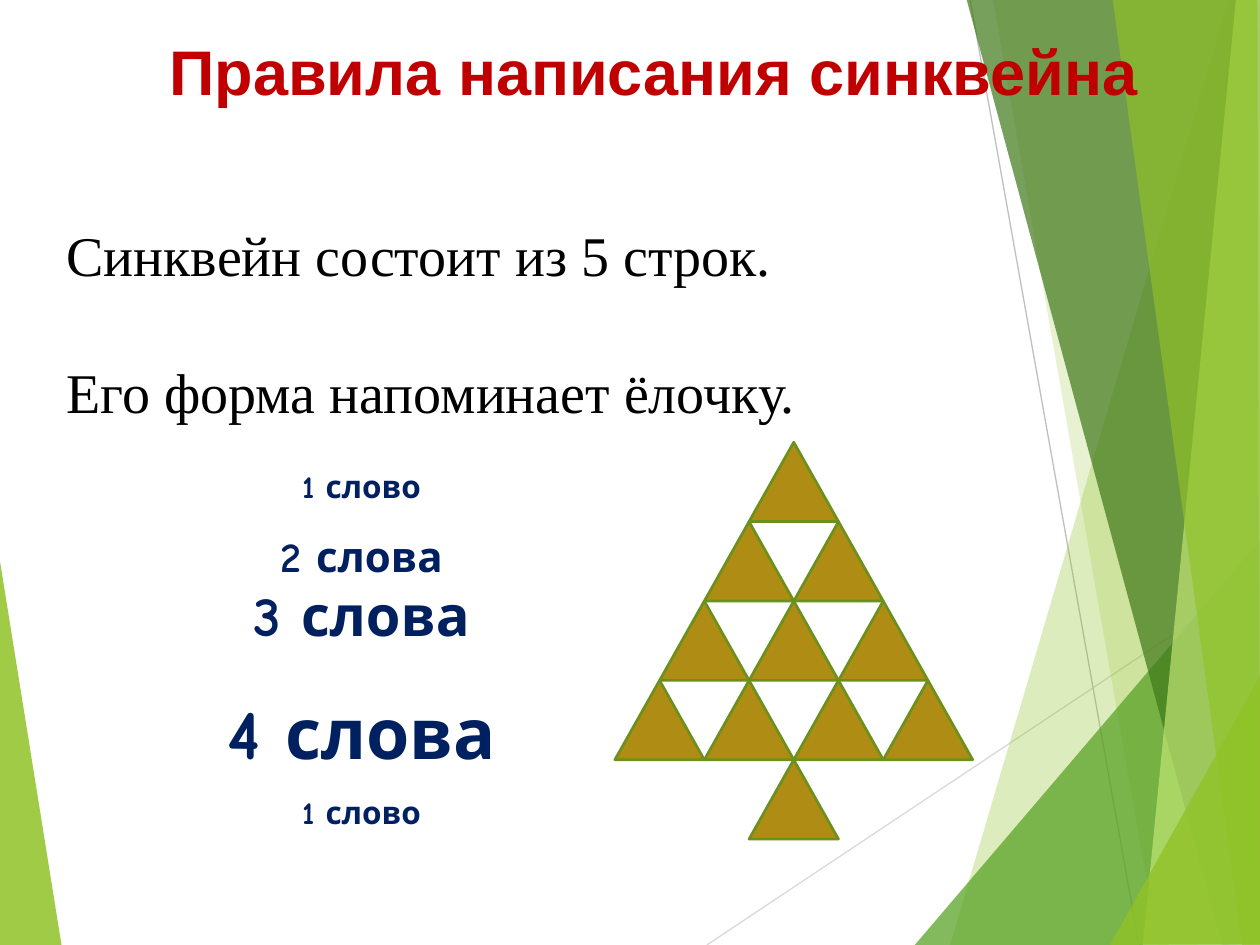
from dataclasses import dataclass

from lxml.etree import SubElement
from pptx import Presentation
from pptx.dml.color import RGBColor
from pptx.enum.shapes import MSO_CONNECTOR, MSO_SHAPE
from pptx.enum.text import PP_ALIGN
from pptx.oxml.ns import qn
from pptx.shapes.base import BaseShape
from pptx.util import Inches, Pt


@dataclass(frozen=True)
class Theme:
    lime: str = "90C226"
    green: str = "54A021"
    dark: str = "3F7819"
    pale: str = "C0E474"
    tree: str = "AF8C14"
    edge: str = "6B901C"
    red: str = "C00000"
    navy: str = "002060"
    black: str = "000000"
    head: int = 36
    body: int = 32
    steps: tuple = (18, 24, 32, 40, 18)


@dataclass(frozen=True)
class Panel:
    points: tuple
    color: str
    alpha: int


@dataclass(frozen=True)
class Ray:
    start: tuple
    end: tuple
    color: str


@dataclass(frozen=True)
class Line:
    text: str
    font: dict
    format: dict


THEME = Theme()

# Backdrop parts, from back to front
BACKDROP = (
    Panel(((-0.01, 4.39), (0.49, 7.51), (-0.01, 7.5)), THEME.lime, 85),
    Ray((5.61, 7.5), (10.01, 4.57), "D9D9D9"),
    Ray((7.7, 0), (9.04, 7.5), "BFBFBF"),
    Panel(((9.75, 0), (7.54, 7.5), (10.02, 7.51), (10.01, 0.01)), THEME.lime, 30),
    Panel(((7.88, -0.01), (9.19, 7.5), (10.01, 7.5), (10.01, -0.01)), THEME.lime, 20),
    Panel(((7.26, 7.5), (10, 4.29), (10.01, 7.5)), THEME.green, 72),
    Panel(((7.67, -0.01), (9.7, 7.5), (10.01, 7.49), (10.01, -0.01)), THEME.dark, 70),
    Panel(((9.81, -0.01), (9.07, 7.5), (10.01, 7.5), (10, -0.01)), THEME.pale, 70),
    Panel(((8.83, -0.01), (9.86, 7.5), (10, 7.5), (9.98, -0.01)), THEME.lime, 65),
    Panel(((8.81, 7.5), (10.01, 5.35), (10.01, 7.49)), THEME.lime, 80),
)


def rgb(code: str) -> RGBColor:
    return RGBColor.from_string(code)


def assign(target: object, values: dict) -> None:
    for name, value in values.items():
        setattr(target, name, value)


def paint(shape: BaseShape, color: str) -> None:
    shape.shadow.inherit = False
    shape.fill.solid()
    shape.fill.fore_color.rgb = rgb(color)


def draw_panel(shapes, panel: Panel) -> None:
    points = [(Inches(x), Inches(y)) for x, y in panel.points]
    outline = shapes.build_freeform(*points[0])
    outline.add_line_segments(points[1:], close=True)
    shape = outline.convert_to_shape()
    paint(shape, panel.color)
    shape.line.fill.background()
    color = shape.fill._xPr.find(qn("a:solidFill"))[0]
    SubElement(color, qn("a:alpha"), val=str(panel.alpha * 1000))


def draw_ray(shapes, ray: Ray) -> None:
    ends = [Inches(value) for value in ray.start + ray.end]
    line = shapes.add_connector(MSO_CONNECTOR.STRAIGHT, *ends)
    line.line.color.rgb = rgb(ray.color)
    line.line.width = Pt(0.75)
    SubElement(line._element.spPr, qn("a:effectLst"))


def draw_text(shapes, box: tuple, color: str, lines: list[Line]) -> None:
    frame = shapes.add_textbox(*map(Inches, box)).text_frame
    frame.word_wrap = True
    for index, line in enumerate(lines):
        para = frame.paragraphs[0] if index == 0 else frame.add_paragraph()
        assign(para, line.format)
        run = para.add_run()
        run.text = line.text
        assign(run.font, line.font)
        run.font.color.rgb = rgb(color)


def draw_tree(shapes, mid: float, top: float, rows: tuple) -> None:
    wide, high = 0.71, 0.63
    for row, count in enumerate(rows):
        for col in range(count):
            left = mid + (col - count / 2) * wide
            box = (left, top + row * high, wide, high)
            shape = shapes.add_shape(MSO_SHAPE.ISOSCELES_TRIANGLE, *map(Inches, box))
            paint(shape, THEME.tree)
            shape.line.color.rgb = rgb(THEME.edge)
            shape.line.width = Pt(1.5)


def main() -> None:
    deck = Presentation()
    assign(deck, {"slide_width": Inches(10), "slide_height": Inches(7.5)})
    shapes = deck.slides.add_slide(deck.slide_layouts[6]).shapes

    for part in BACKDROP:
        draw = draw_panel if isinstance(part, Panel) else draw_ray
        draw(shapes, part)

    # Title
    font = {"name": "Arial", "size": Pt(THEME.head), "bold": True}
    center = {"alignment": PP_ALIGN.CENTER}
    draw_text(shapes, (0.67, 0.21, 9.04, 0.71), THEME.red,
              [Line("Правила написания синквейна", font, center)])

    # Statements
    font = {"name": "Times New Roman", "size": Pt(THEME.body)}
    draw_text(shapes, (0.43, 1.7, 8.66, 2.79), THEME.black, [
        Line("Синквейн состоит из 5 строк.", font, {}),
        Line("Его форма напоминает ёлочку.", font, {"space_before": Pt(40)}),
    ])

    # Fir tree with its trunk
    draw_tree(shapes, 6.3, 3.51, (1, 2, 3, 4, 1))

    # Word counts beside the tree rows
    words = ("1 слово", "2 слова", "3 слова", "4 слова", "1 слово")
    lines = []
    for text, size in zip(words, THEME.steps):
        font = {"name": "Comic Neue", "size": Pt(size), "bold": True}
        space = 1.0 if text.startswith("3") else 1.5
        lines.append(Line(text, font, center | {"line_spacing": space}))
    draw_text(shapes, (1.69, 3.51, 2.36, 3.12), THEME.navy, lines)

    deck.save("out.pptx")


if __name__ == "__main__":
    main()
